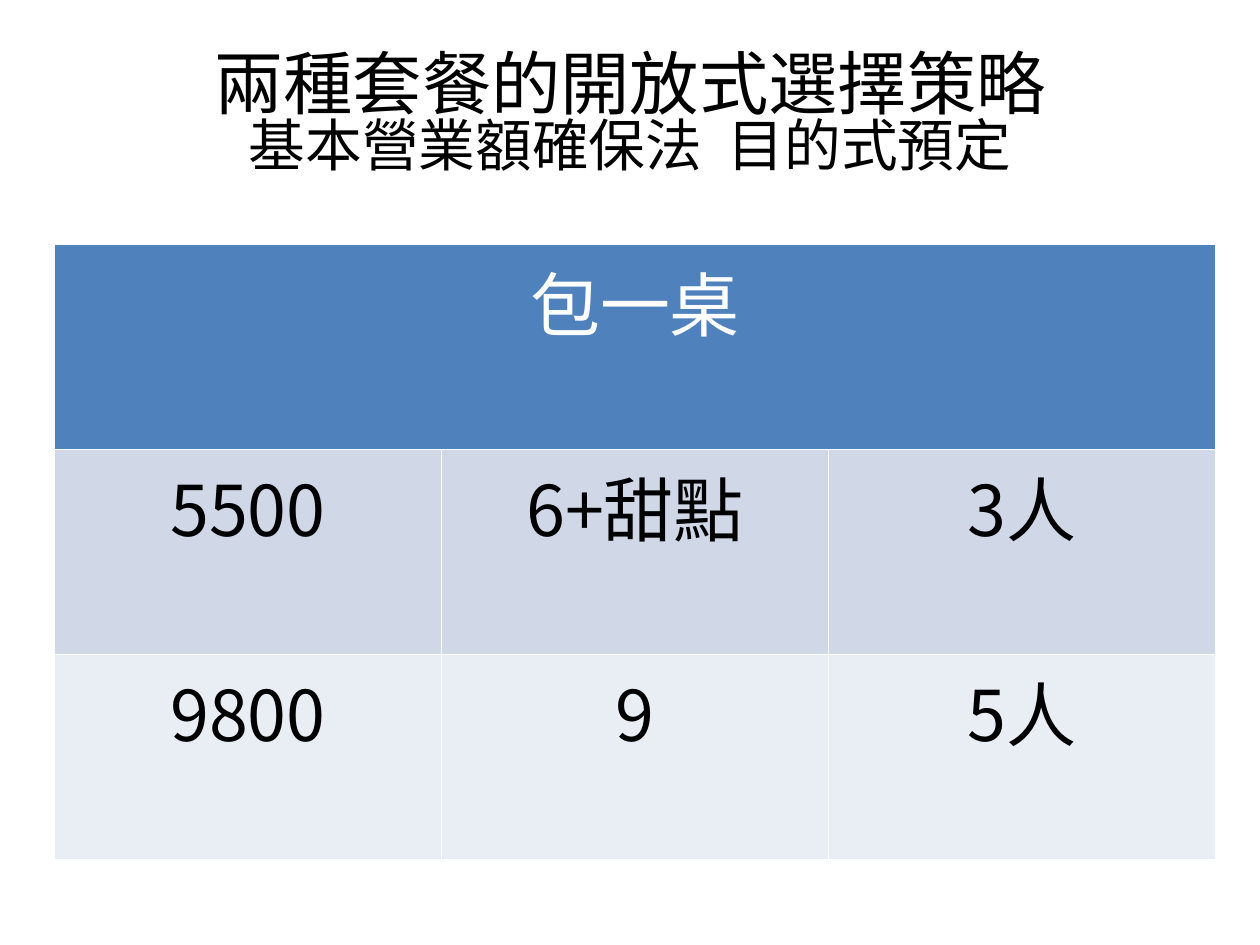
import pptx
import pptx.dml.color
import pptx.enum.text
import pptx.oxml.ns
import pptx.util
from lxml import etree
from pptx.dml.color import RGBColor
from pptx.util import Cm

FONT_NAME = "Noto Sans CJK SC"
BLACK = RGBColor(0x00, 0x00, 0x00)
WHITE = RGBColor(0xFF, 0xFF, 0xFF)
HEADER_BLUE = RGBColor(0x4F, 0x81, 0xBD)
BAND_FILLS = (RGBColor(0xD0, 0xD8, 0xE8), RGBColor(0xE9, 0xED, 0xF4))

TITLE_LINES = (("兩種套餐的開放式選擇策略", 39.6), ("基本營業額確保法  目的式預定", 32.4))
TABLE_HEADER = "包一桌"
TABLE_ROWS = (("5500", "6+甜點", "3人"), ("9800", "9", "5人"))


def add_styled_run(paragraph, text, size, color):
    """Add a run whose Latin and East Asian text share one font."""
    run = paragraph.add_run()
    run.text = text
    run.font.size = pptx.util.Pt(size)
    run.font.bold = False
    run.font.name = FONT_NAME
    run.font.color.rgb = color
    east_asian = etree.SubElement(run.font._element, pptx.oxml.ns.qn("a:ea"))
    east_asian.set("typeface", FONT_NAME)


def add_title(slide, left, top, width, height):
    text_frame = slide.shapes.add_textbox(left, top, width, height).text_frame
    text_frame.word_wrap = True
    text_frame.vertical_anchor = pptx.enum.text.MSO_ANCHOR.MIDDLE
    paragraph = text_frame.paragraphs[0]
    paragraph.alignment = pptx.enum.text.PP_ALIGN.CENTER
    paragraph.line_spacing = 0.8
    for index, (text, size) in enumerate(TITLE_LINES):
        if index:
            paragraph.add_line_break()
        add_styled_run(paragraph, text, size, BLACK)


def fill_cell(cell, text, fill, color):
    cell.fill.solid()
    cell.fill.fore_color.rgb = fill
    paragraph = cell.text_frame.paragraphs[0]
    paragraph.alignment = pptx.enum.text.PP_ALIGN.CENTER
    add_styled_run(paragraph, text, 40, color)


def add_package_table(slide, left, top, width, height):
    row_count, column_count = len(TABLE_ROWS) + 1, len(TABLE_ROWS[0])
    table = slide.shapes.add_table(
        row_count, column_count, left, top, width, height
    ).table
    header = table.cell(0, 0)
    header.merge(table.cell(0, column_count - 1))
    fill_cell(header, TABLE_HEADER, HEADER_BLUE, WHITE)
    for row, (values, fill) in enumerate(zip(TABLE_ROWS, BAND_FILLS), start=1):
        for column, value in enumerate(values):
            fill_cell(table.cell(row, column), value, fill, BLACK)


def main():
    presentation = pptx.Presentation()
    presentation.slide_width = Cm(25.4)
    presentation.slide_height = Cm(19.05)
    slide = presentation.slides.add_slide(presentation.slide_layouts[6])
    add_title(slide, Cm(1.27), Cm(0.76), Cm(22.86), Cm(3.18))
    add_package_table(slide, Cm(1.1), Cm(4.93), Cm(23.4), Cm(12.4))
    presentation.save("out.pptx")


if __name__ == "__main__":
    main()
